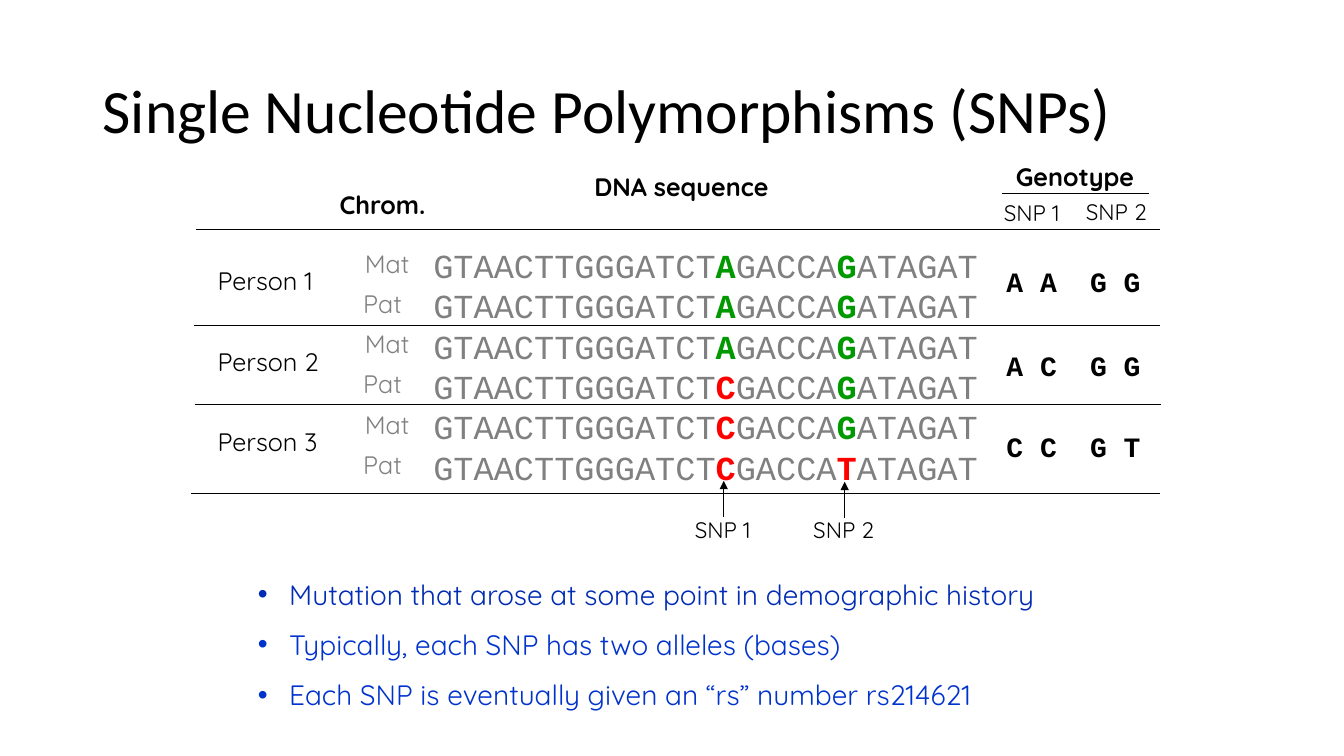
import pptx
import pptx.util
import pptx.dml.color
import pptx.enum.shapes
import pptx.enum.text
from lxml import etree

RGBColor = pptx.dml.color.RGBColor
Align = pptx.enum.text.PP_ALIGN
Fit = pptx.enum.text.MSO_AUTO_SIZE

BLACK = RGBColor(0x00, 0x00, 0x00)
GREY = RGBColor(0x80, 0x80, 0x80)
GREEN = RGBColor(0x00, 0x99, 0x00)
RED = RGBColor(0xFF, 0x00, 0x00)
NAVY = RGBColor(0x00, 0x2B, 0xB4)
BLUE = RGBColor(0x00, 0x33, 0xCC)

SANS, MONO, TITLE_FONT = "Quicksand", "Courier New", "Calibri"
COLUMNS, ROWS = 133.33, 75
SLIDE_WIDTH, SLIDE_HEIGHT = pptx.util.Inches(13.33), pptx.util.Inches(7.5)
DRAWING = "{http://schemas.openxmlformats.org/drawingml/2006/main}"

SEQUENCE_PARTS = ("GTAACTTGGGATCT", "GACCA", "ATAGAT")
REFERENCE_ALLELES = "AG"
PEOPLE = [
    ("Person 1", 25.8, 25.8, ("AG", "AG")),
    ("Person 2", 33.9, 34.1, ("AG", "CG")),
    ("Person 3", 41.8, 42.1, ("CG", "CT")),
]
STRAND_TOP, STRAND_STEP = 24.1, 4
GENOTYPE_LEFT, GENOTYPE_STEP = 98, 8.3
RULES = [(19.4, 115.1, 22.8), (19.2, 115.1, 32.3), (19.3, 115.2, 40.1),
         (19, 115.1, 49), (99.4, 114, 19.2)]
SNP_MARKERS = [("SNP 1", 66.2, 71.8, 51.3, 47.7), ("SNP 2", 78.2, 83.8, 51.4, 47.8)]
FACTS = [
    ("Mutation that arose at some point in demographic history", NAVY),
    ("Typically, each SNP has two alleles (bases)", BLUE),
    ("Each SNP is eventually given an “rs” number rs214621", BLUE),
]


def col(count):
    return round(SLIDE_WIDTH * count / COLUMNS)


def row(count):
    return round(SLIDE_HEIGHT * count / ROWS)


def add_frame(slide, left, top, width, height, fit=Fit.SHAPE_TO_FIT_TEXT):
    frame = slide.shapes.add_textbox(col(left), row(top), col(width), row(height)).text_frame
    frame.word_wrap = True
    frame.auto_size = fit
    return frame


def next_paragraph(frame, index):
    return frame.add_paragraph() if index else frame.paragraphs[0]


def add_run(paragraph, wording, size, color=BLACK, font=SANS, bold=False):
    run = paragraph.add_run()
    run.text = wording
    run.font.size = pptx.util.Pt(size)
    run.font.name = font
    run.font.bold = bold
    run.font.color.rgb = color


def add_label(slide, wording, place, size=18, align=Align.CENTER, **style):
    paragraph = add_frame(slide, *place).paragraphs[0]
    paragraph.alignment = align
    add_run(paragraph, wording, size, **style)


def add_line(slide, start, end, arrow=False):
    line = slide.shapes.add_connector(
        pptx.enum.shapes.MSO_CONNECTOR.STRAIGHT,
        col(start[0]), row(start[1]), col(end[0]), row(end[1]))
    line.line.color.rgb = BLACK
    line.line.width = pptx.util.Pt(0.75)
    if arrow:
        etree.SubElement(line.line._get_or_add_ln(), DRAWING + "tailEnd", type="triangle")
    etree.SubElement(line._element.spPr, DRAWING + "effectLst")


def add_title(slide):
    frame = add_frame(slide, 9.2, 4, 115, 14.5, Fit.NONE)
    frame.vertical_anchor = pptx.enum.text.MSO_ANCHOR.MIDDLE
    paragraph = frame.paragraphs[0]
    paragraph.line_spacing = 0.9
    add_run(paragraph, "Single Nucleotide Polymorphisms (SNPs)", 44, font=TITLE_FONT)


def add_headings(slide):
    add_label(slide, "Chrom.", (27.7, 18.3, 20.5, 4), bold=True)
    add_label(slide, "DNA sequence", (56.9, 16.5, 21.4, 7.1), bold=True)
    add_label(slide, "Genotype", (98, 15.5, 17.3, 4), bold=True)
    add_label(slide, "SNP 1", (93.7, 19.3, 17.3, 3.7), 16)
    add_label(slide, "SNP 2", (102.1, 19.2, 17.3, 3.7), 16)


def add_sequences(slide):
    frame = add_frame(slide, 42, 23.8, 59.1, 25.2)
    strands = [strand for person in PEOPLE for strand in person[3]]
    for index, alleles in enumerate(strands):
        paragraph = next_paragraph(frame, index)
        add_run(paragraph, SEQUENCE_PARTS[0], 24, GREY, MONO)
        for allele, reference, following in zip(alleles, REFERENCE_ALLELES, SEQUENCE_PARTS[1:]):
            color = GREEN if allele == reference else RED
            add_run(paragraph, allele, 24, color, MONO, True)
            add_run(paragraph, following, 24, GREY, MONO)


def add_people(slide):
    for number, (person, name_top, genotype_top, strands) in enumerate(PEOPLE):
        add_label(slide, person, (20.6, name_top, 13.4, 4), align=Align.LEFT)
        for parent, (origin, width) in enumerate((("Mat", 7.2), ("Pat", 6.3))):
            top = STRAND_TOP + STRAND_STEP * (2 * number + parent)
            add_label(slide, origin, (34.8, top, width, 4), color=GREY)
        for snp, alleles in enumerate(zip(*strands)):
            left = GENOTYPE_LEFT + GENOTYPE_STEP * snp
            add_label(slide, " ".join(alleles), (left, genotype_top, 8.7, 4.4), 20,
                      font=MONO, bold=True)


def add_snp_markers(slide):
    for wording, left, arrow_column, arrow_base, arrow_tip in SNP_MARKERS:
        add_label(slide, wording, (left, 50.7, 11, 3.7), 16)
        add_line(slide, (arrow_column, arrow_base), (arrow_column, arrow_tip), arrow=True)


def add_facts(slide):
    frame = add_frame(slide, 21.9, 55.1, 83.3, 15.9)
    for index, (fact, color) in enumerate(FACTS):
        paragraph = next_paragraph(frame, index)
        paragraph.level = 1
        paragraph.line_spacing = 1.5
        properties = paragraph._p.get_or_add_pPr()
        properties.set("marL", str(col(5.8)))
        properties.set("indent", str(-col(3.1)))
        etree.SubElement(properties, DRAWING + "buFont", typeface="Arial")
        etree.SubElement(properties, DRAWING + "buChar", char="•")
        add_run(paragraph, fact, 20, color)


def main():
    presentation = pptx.Presentation()
    presentation.slide_width = SLIDE_WIDTH
    presentation.slide_height = SLIDE_HEIGHT
    slide = presentation.slides.add_slide(presentation.slide_layouts[6])
    add_title(slide)
    add_headings(slide)
    add_sequences(slide)
    add_people(slide)
    for left, right, level in RULES:
        add_line(slide, (left, level), (right, level))
    add_snp_markers(slide)
    add_facts(slide)
    presentation.save("out.pptx")


if __name__ == "__main__":
    main()
